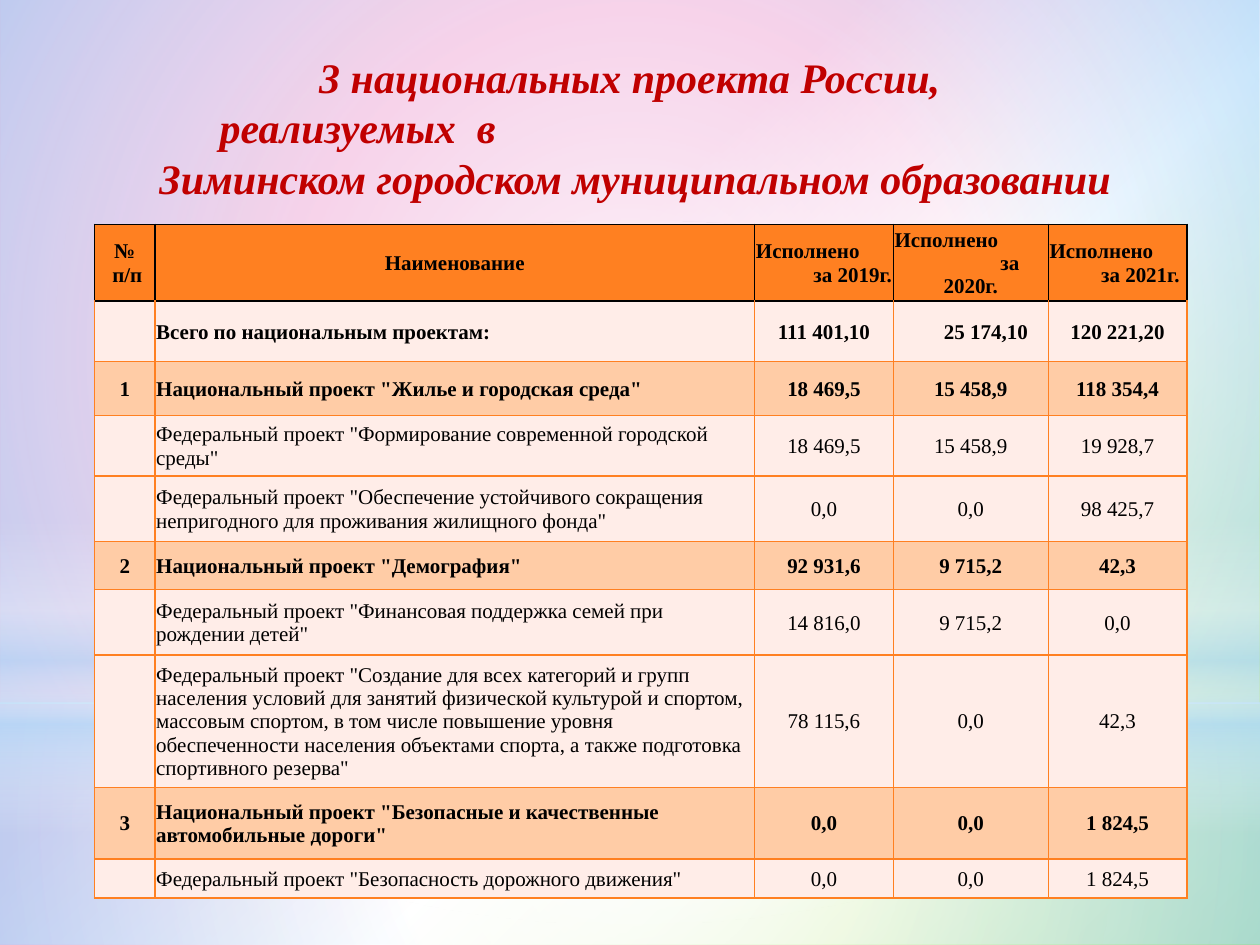
from typing import NamedTuple, Optional

from lxml.etree import SubElement
from pptx import Presentation
from pptx.dml.color import RGBColor
from pptx.enum.shapes import MSO_SHAPE as Preset
from pptx.enum.text import MSO_ANCHOR as Anchor, MSO_AUTO_SIZE as AutoSize, PP_ALIGN as Align
from pptx.oxml.ns import qn
from pptx.util import Inches, Pt

WIDTH, HEIGHT = Inches(10), Inches(7.5)
FONT = "Times New Roman"
ORANGE, PEACH, PALE = "FF8021", "FFCCA6", "FFEDE8"
BLACK, RED, WHITE, SKY = "000000", "C00000", "FFFFFF", "B4DCFA"
COLUMNS = (4.8, 47.6, 11, 12.3, 11)


class Area(NamedTuple):
    """Left, top, width and height as percentages of the slide."""
    left: float
    top: float
    width: float
    height: float

    def lengths(self) -> tuple:
        return across(self.left), down(self.top), across(self.width), down(self.height)


class Stop(NamedTuple):
    """A gradient stop with position and opacity in percent."""
    position: int
    color: str
    opacity: int = 100


class Glow(NamedTuple):
    """A translucent backdrop shape; without an angle it is radial."""
    preset: Preset
    area: Area
    stops: tuple
    angle: Optional[int] = None


class Line(NamedTuple):
    """A paragraph with alignment and a left indent in percent of the slide width."""
    text: str
    align: Align = Align.CENTER
    indent: float = 0


class Row(NamedTuple):
    """A table row: height in percent, number, name and yearly amounts."""
    height: float
    number: str
    name: str
    amounts: tuple
    fill: str = PALE
    bold: bool = False


GLOWS = (
    Glow(Preset.RECTANGLE, Area(0, 74.4, 100, 25.6),
         (Stop(0, WHITE, 91), Stop(37, WHITE, 76), Stop(100, SKY, 79))),
    Glow(Preset.RECTANGLE, Area(0, 0, 100, 74.4),
         (Stop(0, WHITE, 89), Stop(48, WHITE, 62), Stop(100, SKY, 79))),
    Glow(Preset.RECTANGLE, Area(0, 54.93, 100, 33.33),
         (Stop(0, WHITE, 0), Stop(29, WHITE, 30), Stop(45, SKY, 40),
          Stop(55, WHITE, 26), Stop(65, SKY, 60), Stop(100, WHITE, 0)), 90),
    Glow(Preset.OVAL, Area(0, 23.33, 100, 74.4), (Stop(0, WHITE), Stop(56, WHITE, 0))),
)
TITLE = (
    Line("3 национальных проекта России, "),
    Line("реализуемых  в", Align.LEFT, 5.05),
    Line("Зиминском городском муниципальном образовании"),
)
DONE = Line("Исполнено", Align.LEFT)
HEADER = (
    (Line("№"), Line(" п/п")),
    (Line("Наименование"),),
    (DONE, Line("за 2019г.", Align.RIGHT)),
    (DONE, Line("за", Align.LEFT, 8.4), Line("2020г.")),
    (DONE, Line("за 2021г.", Align.LEFT, 4.1)),
)
ROWS = (
    Row(6.4, "", "Всего по национальным проектам:",
        ("111 401,10", "25 174,10", "120 221,20"), bold=True),
    Row(5.73, "1", 'Национальный проект "Жилье и городская среда"',
        ("18 469,5", "15 458,9", "118 354,4"), PEACH, True),
    Row(6.4, "", 'Федеральный проект "Формирование современной городской среды"',
        ("18 469,5", "15 458,9", "19 928,7")),
    Row(6.93, "", 'Федеральный проект "Обеспечение устойчивого сокращения '
        'непригодного для проживания жилищного фонда"', ("0,0", "0,0", "98 425,7")),
    Row(5.07, "2", 'Национальный проект "Демография"',
        ("92 931,6", "9 715,2", "42,3"), PEACH, True),
    Row(6.93, "", 'Федеральный проект "Финансовая поддержка семей при рождении детей"',
        ("14 816,0", "9 715,2", "0,0")),
    Row(14, "", 'Федеральный проект "Создание для всех категорий и групп населения условий '
        'для занятий физической культурой и спортом, массовым спортом, в том числе повышение '
        'уровня обеспеченности населения объектами спорта, а также подготовка спортивного '
        'резерва"', ("78 115,6", "0,0", "42,3")),
    Row(7.6, "3", 'Национальный проект "Безопасные и качественные автомобильные дороги"',
        ("0,0", "0,0", "1 824,5"), PEACH, True),
    Row(4.13, "", 'Федеральный проект "Безопасность дорожного движения"',
        ("0,0", "0,0", "1 824,5")),
)


def across(percent: float) -> int:
    """Turn a share of the slide width into a length."""
    return round(WIDTH * percent / 100)


def down(percent: float) -> int:
    """Turn a share of the slide height into a length."""
    return round(HEIGHT * percent / 100)


def paint(target, color: str) -> None:
    """Give a fill one solid colour."""
    target.solid()
    target.fore_color.rgb = RGBColor.from_string(color)


def blend(target, element, stops: tuple, angle: Optional[int] = None) -> None:
    """Give a fill a linear gradient, or a radial one without an angle."""
    target.gradient()
    gradient = next(element.iter(qn("a:gradFill")))
    for child in list(gradient):
        gradient.remove(child)
    stop_list = SubElement(gradient, qn("a:gsLst"))
    for stop in stops:
        mark = SubElement(stop_list, qn("a:gs"), pos=str(stop.position * 1000))
        color = SubElement(mark, qn("a:srgbClr"), val=stop.color)
        if stop.opacity < 100:
            SubElement(color, qn("a:alpha"), val=str(stop.opacity * 1000))
    if angle is None:
        center = SubElement(gradient, qn("a:path"), path="circle")
        SubElement(center, qn("a:fillToRect"), dict.fromkeys("ltrb", "50000"))
    else:
        SubElement(gradient, qn("a:lin"), ang=str(angle * 60000), scaled="0")


def write(frame, lines: tuple, size: int, color: str, bold: bool, italic: bool = False) -> None:
    """Fill a text frame with formatted paragraphs."""
    frame.text = "\n".join(line.text for line in lines)
    for para, line in zip(frame.paragraphs, lines):
        para.alignment = line.align
        if line.indent:
            para._p.get_or_add_pPr().set("marL", str(across(line.indent)))
        for span in para.runs:
            font = span.font
            font.name, font.size, font.bold, font.italic = FONT, Pt(size), bold, italic
            font.color.rgb = RGBColor.from_string(color)


def add_glow(page, glow: Glow) -> None:
    """Draw one translucent backdrop shape."""
    shape = page.shapes.add_shape(glow.preset, *glow.area.lengths())
    shape.shadow.inherit = False
    shape.line.fill.background()
    blend(shape.fill, shape.element, glow.stops, glow.angle)


def fill_cell(cell, lines: tuple, fill: str, bold: bool, edge: str, top: str) -> None:
    """Write, border and colour one table cell."""
    cell.margin_left = cell.margin_right = cell.margin_top = Inches(0.01)
    cell.margin_bottom = 0
    cell.vertical_anchor = Anchor.MIDDLE
    write(cell.text_frame, lines, 12, BLACK, bold)
    properties = cell._tc.get_or_add_tcPr()
    for side, color in zip("LRTB", (edge, edge, top, edge)):
        border = SubElement(properties, qn(f"a:ln{side}"), w=str(Pt(1)))
        SubElement(SubElement(border, qn("a:solidFill")), qn("a:srgbClr"), val=color)
    paint(cell.fill, fill)


def add_projects(page) -> None:
    """Draw the table of projects."""
    heights = (6.4, *(row.height for row in ROWS))
    area = Area(7.5, 23.73, sum(COLUMNS), sum(heights))
    table = page.shapes.add_table(len(heights), len(COLUMNS), *area.lengths()).table
    table.first_row = table.horz_banding = False
    for column, width in zip(table.columns, COLUMNS):
        column.width = across(width)
    for band, height in zip(table.rows, heights):
        band.height = down(height)
    for index, lines in enumerate(HEADER):
        fill_cell(table.cell(0, index), lines, ORANGE, True, BLACK, BLACK)
    for number, row in enumerate(ROWS, 1):
        top = BLACK if number == 1 else ORANGE
        lines = [Line(row.number), Line(row.name, Align.LEFT), *map(Line, row.amounts)]
        if number == 1:
            lines[3] = lines[3]._replace(indent=2.4)
        for index, line in enumerate(lines):
            fill_cell(table.cell(number, index), (line,), row.fill, row.bold, ORANGE, top)


def main() -> None:
    """Build the slide and save it."""
    deck = Presentation()
    deck.slide_width, deck.slide_height = WIDTH, HEIGHT
    page = deck.slides.add_slide(deck.slide_layouts[6])
    backdrop = (Stop(0, "EA8AC8"), Stop(39, "EA8AC8"), Stop(60, WHITE), Stop(100, "81D31A"))
    blend(page.background.fill, page.element, backdrop, 45)
    for glow in GLOWS:
        add_glow(page, glow)
    box = page.shapes.add_textbox(*Area(11.4, 4.8, 78, 16.8).lengths())
    box.text_frame.word_wrap = True
    box.text_frame.auto_size = AutoSize.SHAPE_TO_FIT_TEXT
    write(box.text_frame, TITLE, 24, RED, True, True)
    add_projects(page)
    deck.save("out.pptx")


if __name__ == "__main__":
    main()
